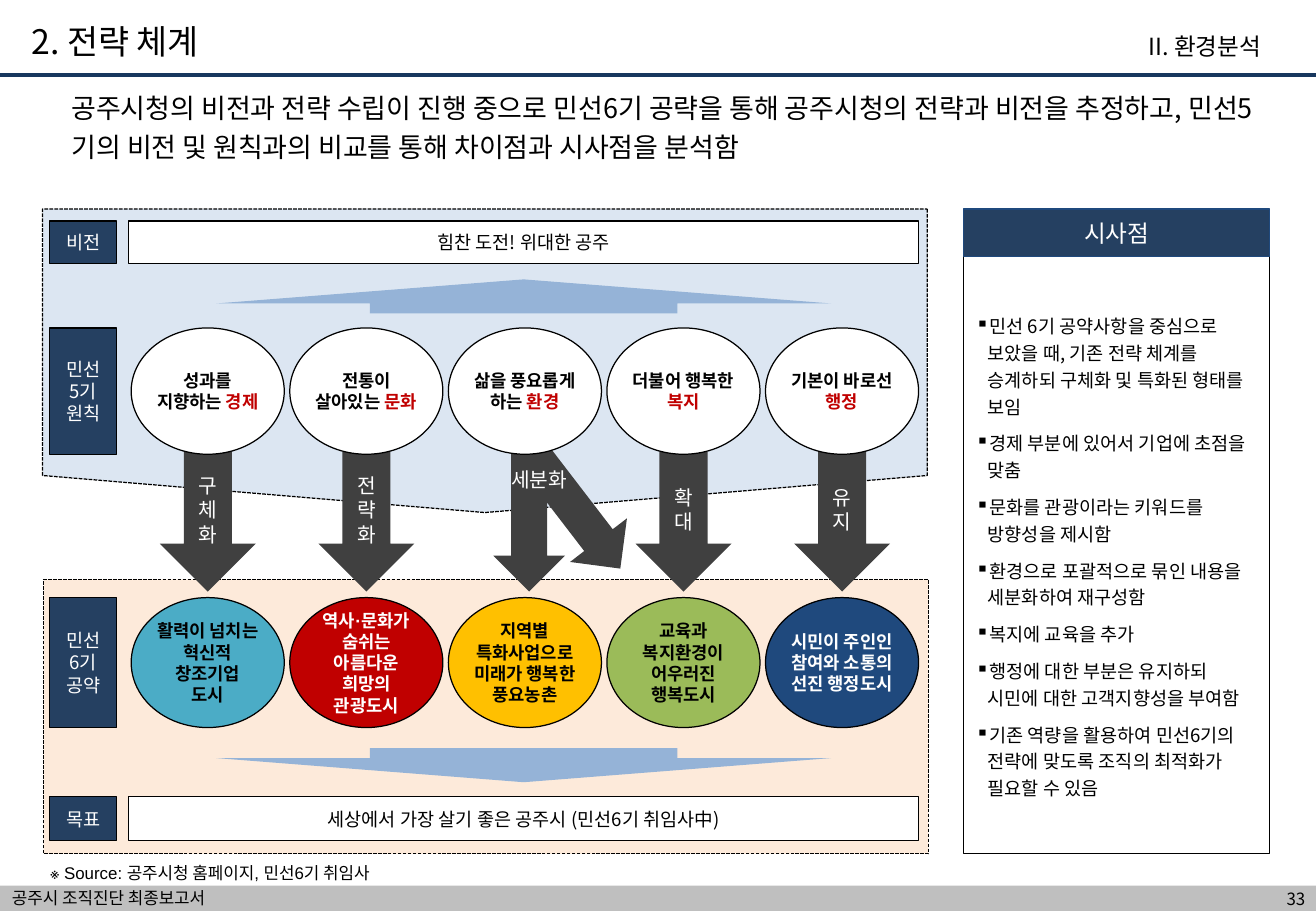
from lxml import etree
from pptx import Presentation
from pptx.dml.color import RGBColor
from pptx.enum.dml import MSO_LINE
from pptx.enum.shapes import MSO_CONNECTOR, MSO_SHAPE
from pptx.enum.text import MSO_ANCHOR, MSO_AUTO_SIZE, PP_ALIGN
from pptx.oxml.ns import qn
from pptx.util import Inches, Pt

RECTANGLE, ELLIPSE, PENTAGON = MSO_SHAPE.RECTANGLE, MSO_SHAPE.OVAL, MSO_SHAPE.PENTAGON
UP_ARROW, DOWN_ARROW = MSO_SHAPE.UP_ARROW, MSO_SHAPE.DOWN_ARROW
STRAIGHT, DASH = MSO_CONNECTOR.STRAIGHT, MSO_LINE.SQUARE_DOT
LEFT, CENTER, RIGHT = PP_ALIGN.LEFT, PP_ALIGN.CENTER, PP_ALIGN.RIGHT
TOP, MIDDLE = MSO_ANCHOR.TOP, MSO_ANCHOR.MIDDLE
GROW = MSO_AUTO_SIZE.SHAPE_TO_FIT_TEXT

KOREAN, LATIN = "Noto Sans CJK KR", "Arial"
COLORS = {
    "black": "000000", "white": "FFFFFF", "navy": "254061", "rule": "17375E",
    "blue": "1F497D", "red": "C00000", "gold": "FFC000", "green": "9BBB59",
    "teal": "4BACC6", "sky": "95B3D7", "pale_blue": "DCE6F2",
    "pale_orange": "FDEADA", "charcoal": "404040", "footer": "BFBFBF",
}
DEFAULT_INSETS = (0.1, 0.05, 0.1, 0.05)
NO_INSETS = (0, 0, 0, 0)


def color(name):
    return RGBColor.from_string(COLORS[name])


class SlideBuilder:
    def __init__(self, slide):
        self.slide = slide

    def fill_text(self, shape, paragraphs, size=11, ink="black", bold=False, font=KOREAN,
                  align=CENTER, anchor=MIDDLE, insets=DEFAULT_INSETS, wrap=True,
                  spacing=None, before=0, indent=0, bullet=None):
        """Fill a shape with paragraphs, each a list of (text, colour or None) runs or a string."""
        frame = shape.text_frame
        frame_format = {"word_wrap": wrap, "vertical_anchor": anchor}
        for side, inset in zip(("left", "top", "right", "bottom"), insets):
            frame_format[f"margin_{side}"] = Inches(inset)
        for name, value in frame_format.items():
            setattr(frame, name, value)
        paragraph_format = {"alignment": align, "line_spacing": spacing, "space_before": Pt(before)}
        font_format = {"name": font, "size": Pt(size), "bold": bold}
        for index, runs in enumerate(paragraphs):
            paragraph = frame.add_paragraph() if index else frame.paragraphs[0]
            for name, value in paragraph_format.items():
                setattr(paragraph, name, value)
            if indent:
                properties = paragraph._p.get_or_add_pPr()
                properties.set("marL", str(Inches(indent)))
                properties.set("indent", str(Inches(-indent if bullet else 0)))
                if bullet:
                    etree.SubElement(properties, qn("a:buChar")).set("char", bullet)
            for text, run_ink in [(runs, None)] if isinstance(runs, str) else runs:
                run = paragraph.add_run()
                run.text = text
                for name, value in font_format.items():
                    setattr(run.font, name, value)
                run.font.color.rgb = color(run_ink or ink)
                east_asian = etree.SubElement(run._r.get_or_add_rPr(), qn("a:ea"))
                east_asian.set("typeface", KOREAN)

    def shape(self, kind, box, fill, line=None, dash=None, rotation=0, adjustments=(),
              paragraphs=(), **text_style):
        shape = self.slide.shapes.add_shape(kind, *map(Inches, box))
        shape.shadow.inherit = False
        shape.rotation = rotation
        shape.fill.solid()
        shape.fill.fore_color.rgb = color(fill)
        if line:
            shape.line.color.rgb = color(line)
            shape.line.width = Pt(0.75)
            shape.line.dash_style = dash
        else:
            shape.line.fill.background()
        for index, value in enumerate(adjustments):
            shape.adjustments[index] = value
        if paragraphs:
            self.fill_text(shape, paragraphs, **text_style)

    def text(self, box, content, **text_style):
        shape = self.slide.shapes.add_textbox(*map(Inches, box))
        self.fill_text(shape, [content], **{"align": LEFT, "anchor": TOP, **text_style})
        shape.text_frame.auto_size = GROW

    def label(self, top, height, paragraphs):
        self.shape(RECTANGLE, (0.41, top, 0.55, height), "navy", "black",
                   paragraphs=paragraphs, ink="white", insets=NO_INSETS)

    def banner(self, top, height, content):
        self.shape(RECTANGLE, (1.06, top, 6.5, height), "white", "black",
                   paragraphs=[content], before=3, insets=(0.04, 0.05, 0.04, 0.05))

    def bubble(self, left, top, height, fill, paragraphs, **text_style):
        self.shape(ELLIPSE, (left, top, 1.26, height), fill, "black",
                   paragraphs=paragraphs, size=10.5, bold=True, insets=NO_INSETS, **text_style)

    def rule(self, top, width):
        connector = self.slide.shapes.add_connector(
            STRAIGHT, Inches(0), Inches(top), Inches(width), Inches(top))
        connector.line.color.rgb = color("rule")
        connector.line.width = Pt(2.5)
        etree.SubElement(connector._element.spPr, qn("a:effectLst"))


# principle, its keyword, arrow label, pledge paragraphs, pledge fill, pledge ink
STRATEGIES = [
    ("성과를 지향하는 ", "경제", "구체화", ["활력이 넘치는 혁신적 창조기업", "도시"], "teal", "black"),
    ("전통이 살아있는 ", "문화", "전략화", ["역사·문화가 숨쉬는 아름다운 희망의 관광도시"], "red", "white"),
    ("삶을 풍요롭게 하는 ", "환경", None, ["지역별 특화사업으로 미래가 행복한 풍요농촌"], "gold", "black"),
    ("더불어 행복한 ", "복지", "확대", ["교육과 복지환경이 어우러진 행복도시"], "green", "black"),
    ("기본이 바로선 ", "행정", "유지", ["시민이 주인인 참여와 소통의 선진 행정도시"], "blue", "white"),
]
IMPLICATIONS = [
    "민선 6기 공약사항을 중심으로 보았을 때, 기존 전략 체계를 승계하되 구체화 및 특화된 형태를 보임",
    "경제 부분에 있어서 기업에 초점을 맞춤",
    "문화를 관광이라는 키워드를 방향성을 제시함",
    "환경으로 포괄적으로 묶인 내용을 세분화하여 재구성함",
    "복지에 교육을 추가",
    "행정에 대한 부분은 유지하되 시민에 대한 고객지향성을 부여함",
    "기존 역량을 활용하여 민선6기의 전략에 맞도록 조직의 최적화가 필요할 수 있음",
]
HEADLINE = ("공주시청의 비전과 전략 수립이 진행 중으로 민선6기 공략을 통해 공주시청의 전략과 비전을 "
            "추정하고, 민선5기의 비전 및 원칙과의 비교를 통해 차이점과 시사점을 분석함")


def add_page_frame(builder):
    builder.shape(RECTANGLE, (0, 7.29, 10.83, 0.21), "footer")
    builder.rule(0.62, 10.83)
    builder.text((9.54, 7.29, 1.3, 0.21), "33", size=10, align=RIGHT, anchor=MIDDLE)
    builder.text((0, 7.26, 5.42, 0.27), "공주시 조직진단 최종보고서", size=10)
    builder.text((0.49, 0.65, 9.93, 0.72), HEADLINE, size=16, spacing=1.2)
    builder.text((9.28, 0.21, 1.2, 0.34), "II. 환경분석", size=14, align=RIGHT, wrap=False)
    builder.text((0.06, 0.16, 1.89, 0.4), "2. 전략 체계", size=20, spacing=0.9,
                 indent=0.1, wrap=False)


def add_implications(builder):
    builder.shape(RECTANGLE, (7.93, 2.11, 2.52, 4.92), "white", "black", paragraphs=IMPLICATIONS,
                  align=LEFT, spacing=1.2, before=6, indent=0.1, bullet="▪")
    builder.shape(RECTANGLE, (7.93, 1.72, 2.52, 0.39), "navy", "blue", paragraphs=["시사점"],
                  size=14, ink="white", insets=(0.08,) * 4)


def add_strategy_map(builder):
    builder.shape(PENTAGON, (2.74, -0.67, 2.5, 7.28), "pale_blue", "black", DASH,
                  rotation=90, adjustments=[0.122])
    builder.shape(RECTANGLE, (0.36, 4.77, 7.28, 2.26), "pale_orange", "black", DASH)
    builder.label(1.82, 0.35, ["비전"])
    builder.banner(1.82, 0.35, "힘찬 도전! 위대한 공주")
    builder.label(2.7, 1.04, ["민선", "5기", "원칙"])
    builder.label(4.92, 1.07, ["민선", "6기", "공약"])
    builder.label(6.56, 0.36, ["목표"])
    builder.banner(6.56, 0.36, "세상에서 가장 살기 좋은 공주시 (민선6기 취임사中)")
    for kind, top in ((UP_ARROW, 2.3), (DOWN_ARROW, 6.16)):
        builder.shape(kind, (1.78, top, 5.06, 0.28), "sky", adjustments=[0.5, 0.71])

    columns = [(1.08 + 1.305 * index, *strategy) for index, strategy in enumerate(STRATEGIES)]
    for left, _, _, change, pledge, fill, ink in columns:
        builder.bubble(left, 4.92, 1.07, fill, pledge, ink=ink, font=LATIN)
        if change:
            builder.shape(DOWN_ARROW, (left + 0.235, 3.72, 0.79, 1.15), "charcoal",
                          paragraphs=[change], size=12, ink="white")
    for left, top, rotation in ((4.06, 3.72, 0), (4.46, 3.65, 322.5)):
        builder.shape(DOWN_ARROW, (left, top, 0.59, 1.15), "charcoal", rotation=rotation)
    for left, principle, keyword, *_ in columns:
        builder.bubble(left, 2.7, 1.04, "white", [[(principle, None), (keyword, "red")]])
    builder.text((4.11, 3.8, 0.71, 0.3), "세분화", size=12, ink="white", wrap=False)
    builder.text((0.39, 7.1, 3.54, 0.17), "※ Source: 공주시청 홈페이지, 민선6기 취임사",
                 size=10, font=LATIN, insets=(0.02, 0, 0.02, 0))


def main():
    presentation = Presentation()
    presentation.slide_width, presentation.slide_height = Inches(10.83), Inches(7.5)
    builder = SlideBuilder(presentation.slides.add_slide(presentation.slide_layouts[6]))
    add_page_frame(builder)
    add_implications(builder)
    add_strategy_map(builder)
    presentation.save("out.pptx")


if __name__ == "__main__":
    main()
